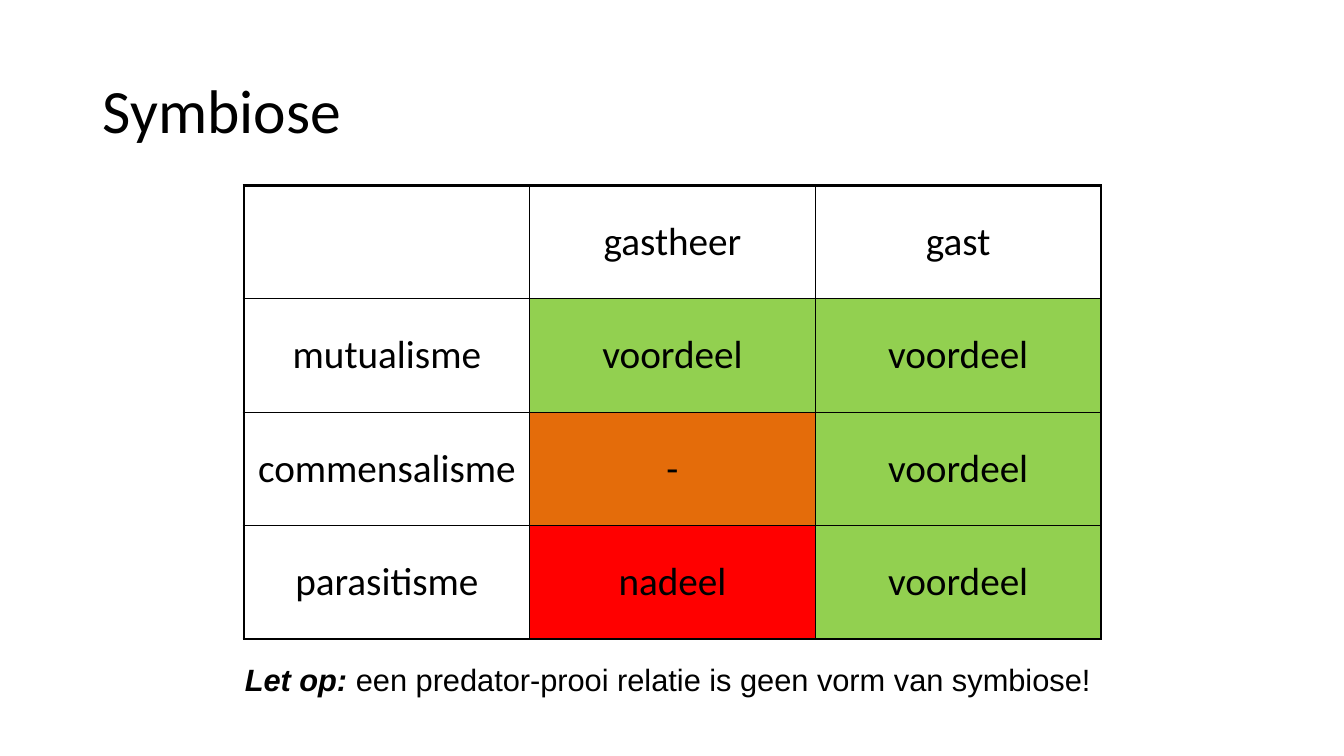
from dataclasses import dataclass

from lxml import etree
from pptx import Presentation
from pptx.dml.color import RGBColor
from pptx.enum.text import MSO_ANCHOR, PP_ALIGN
from pptx.oxml.ns import qn
from pptx.util import Inches, Pt

MIDDLE = MSO_ANCHOR.MIDDLE
CENTER = PP_ALIGN.CENTER


@dataclass(frozen=True)
class Theme:
    ink: str = "000000"
    benefit: str = "92D050"
    neutral: str = "E46C0A"
    harm: str = "FF0000"
    body_font: str = "Calibri"
    note_font: str = "Arial"
    title_size: int = 44
    cell_size: int = 28
    note_size: int = 22
    outer_line: float = 2.25
    inner_line: float = 1


theme = Theme()


def add_run(p, text, size, font, strong=False):
    r = p.add_run()
    r.text = text
    r.font.size = Pt(size)
    r.font.name = font
    r.font.bold = r.font.italic = strong
    r.font.color.rgb = RGBColor.from_string(theme.ink)


def add_border(cell, side, width):
    """Draw one cell side (L, R, T or B); call before setting the fill."""
    ln = etree.SubElement(cell._tc.get_or_add_tcPr(), qn(f"a:ln{side}"), w=str(Pt(width)))
    fill = etree.SubElement(ln, qn("a:solidFill"))
    etree.SubElement(fill, qn("a:srgbClr"), val=theme.ink)


prs = Presentation()
prs.slide_width = Inches(13.33)
prs.slide_height = Inches(7.5)
s = prs.slides.add_slide(prs.slide_layouts[6])

# Title
title = s.shapes.add_textbox(Inches(0.92), Inches(0.4), Inches(11.5), Inches(1.45))
tf = title.text_frame
tf.word_wrap = True
tf.vertical_anchor = MIDDLE
p = tf.paragraphs[0]
p.line_spacing = 0.9
add_run(p, "Symbiose", theme.title_size, theme.body_font)

# Table of effects on host and guest
rows = [
    ["", "gastheer", "gast"],
    ["mutualisme", "voordeel", "voordeel"],
    ["commensalisme", "-", "voordeel"],
    ["parasitisme", "nadeel", "voordeel"],
]
effect_fills = {"voordeel": theme.benefit, "-": theme.neutral, "nadeel": theme.harm}
last_row, last_col = len(rows) - 1, len(rows[0]) - 1

table = s.shapes.add_table(
    len(rows), len(rows[0]), Inches(2.42), Inches(1.84), Inches(8.5), Inches(4.5)
).table
table.first_row = table.horz_banding = False

for i, row in enumerate(rows):
    for j, text in enumerate(row):
        cell = table.cell(i, j)
        cell.vertical_anchor = MIDDLE
        outer_sides = {"L": j == 0, "R": j == last_col, "T": i == 0, "B": i == last_row}
        for side, is_outer in outer_sides.items():
            add_border(cell, side, theme.outer_line if is_outer else theme.inner_line)
        if text in effect_fills:
            cell.fill.solid()
            cell.fill.fore_color.rgb = RGBColor.from_string(effect_fills[text])
        else:
            cell.fill.background()
        if text:
            p = cell.text_frame.paragraphs[0]
            p.alignment = CENTER
            add_run(p, text, theme.cell_size, theme.body_font)

# Note under the table
note = s.shapes.add_textbox(Inches(2.33), Inches(6.51), Inches(8.71), Inches(0.47))
tf = note.text_frame
tf.word_wrap = False
p = tf.paragraphs[0]
add_run(p, "Let op: ", theme.note_size, theme.note_font, strong=True)
add_run(p, "een predator-prooi relatie is geen vorm van symbiose!",
        theme.note_size, theme.note_font)

prs.save("out.pptx")
